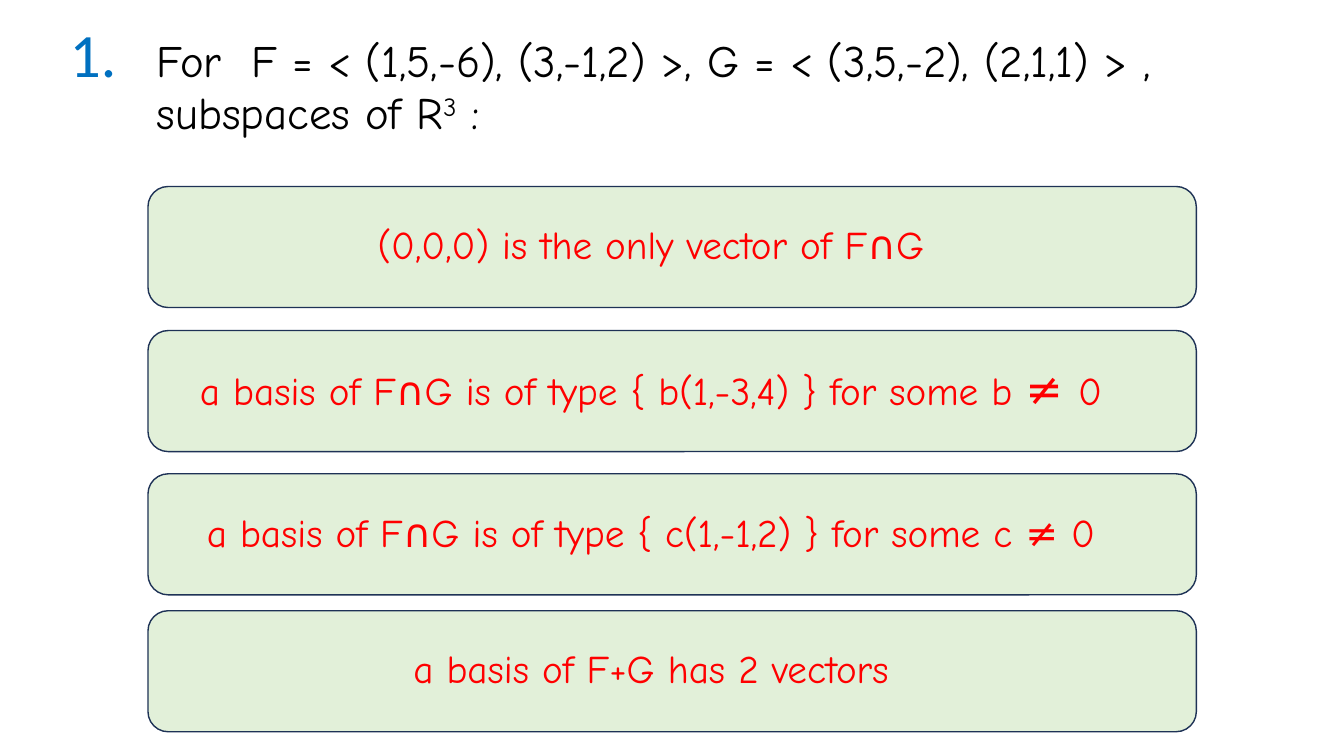
import pptx
import pptx.util
import pptx.dml.color
import pptx.enum.shapes
import pptx.enum.text

Cm = pptx.util.Cm
Pt = pptx.util.Pt
ALIGN = pptx.enum.text.PP_ALIGN

NUMBER = {"size": Pt(44), "name": "Calibri", "color": "0070C0"}
QUESTION = {"size": Pt(32), "name": "Comic Neue", "color": "000000"}
ANSWER = {"size": Pt(28), "name": "Comic Neue", "color": "FF0000"}
LARGE_ANSWER = {**ANSWER, "size": Pt(32)}

TITLE_START = [
    ("1.\t", NUMBER),
    ("For  F = < (1,5,-6), (3,-1,2) >, G = < (3,5,-2), (2,1,1) > ,", QUESTION),
]
TITLE_END = [("subspaces of R", QUESTION), ("3", QUESTION), (" :", QUESTION)]

ANSWERS = [
    (4.70, [("(0,0,0) is the only vector of F∩G", ANSWER)]),
    (8.33, [
        ("a basis of F∩G is of type { b(1,-3,4) } for some b ", ANSWER),
        ("≠ ", LARGE_ANSWER),
        ("0", ANSWER),
    ]),
    (11.94, [("a basis of F∩G is of type { c(1,-1,2) } for some c ≠ 0", ANSWER)]),
    (15.39, [("a basis of F+G has 2 vectors", ANSWER)]),
]
BOX_LEFT, BOX_WIDTH, BOX_HEIGHT = Cm(3.73), Cm(26.42), Cm(3.05)
TITLE_INDENT = Cm(2.2)


def rgb(color):
    return pptx.dml.color.RGBColor.from_string(color)


def set_values(target, values):
    for name, value in values.items():
        setattr(target, name, value)


def add_runs(paragraph, pieces):
    runs = []
    for text, style in pieces:
        run = paragraph.add_run()
        run.text = text
        set_values(run.font, {"size": style["size"], "name": style["name"]})
        run.font.color.rgb = rgb(style["color"])
        runs.append(run)
    return runs


def add_title(slide):
    title = slide.shapes.title
    set_values(title, {"left": Cm(1.5), "top": Cm(0.23),
                       "width": Cm(30.05), "height": Cm(3.68)})
    set_values(title.text_frame, {
        "word_wrap": True,
        "auto_size": pptx.enum.text.MSO_AUTO_SIZE.NONE,
        "vertical_anchor": pptx.enum.text.MSO_ANCHOR.MIDDLE,
    })
    paragraph = title.text_frame.paragraphs[0]
    set_values(paragraph, {"alignment": ALIGN.LEFT, "line_spacing": 0.9})
    properties = paragraph._p.get_or_add_pPr()
    properties.set("marL", str(TITLE_INDENT))
    properties.set("indent", str(-TITLE_INDENT))
    add_runs(paragraph, TITLE_START)
    paragraph.add_line_break()
    exponent = add_runs(paragraph, TITLE_END)[1]
    exponent.font._element.set("baseline", "30000")


def add_answer(slide, top, pieces):
    box = slide.shapes.add_shape(
        pptx.enum.shapes.MSO_SHAPE.ROUNDED_RECTANGLE,
        BOX_LEFT, Cm(top), BOX_WIDTH, BOX_HEIGHT)
    box.shadow.inherit = False
    box.fill.solid()
    box.fill.fore_color.rgb = rgb("E2F0D9")
    box.line.color.rgb = rgb("1E3256")
    box.line.width = Pt(1)
    set_values(box.text_frame, {
        "word_wrap": True,
        "margin_right": Cm(1.32),
        "vertical_anchor": pptx.enum.text.MSO_ANCHOR.MIDDLE,
    })
    paragraph = box.text_frame.paragraphs[0]
    set_values(paragraph, {"alignment": ALIGN.CENTER, "line_spacing": 0.9,
                           "space_before": Pt(10)})
    add_runs(paragraph, pieces)


def main():
    presentation = pptx.Presentation()
    set_values(presentation, {"slide_width": Cm(33.87), "slide_height": Cm(19.05)})
    slide = presentation.slides.add_slide(presentation.slide_layouts[5])
    add_title(slide)
    for top, pieces in ANSWERS:
        add_answer(slide, top, pieces)
    presentation.save("out.pptx")


if __name__ == "__main__":
    main()
